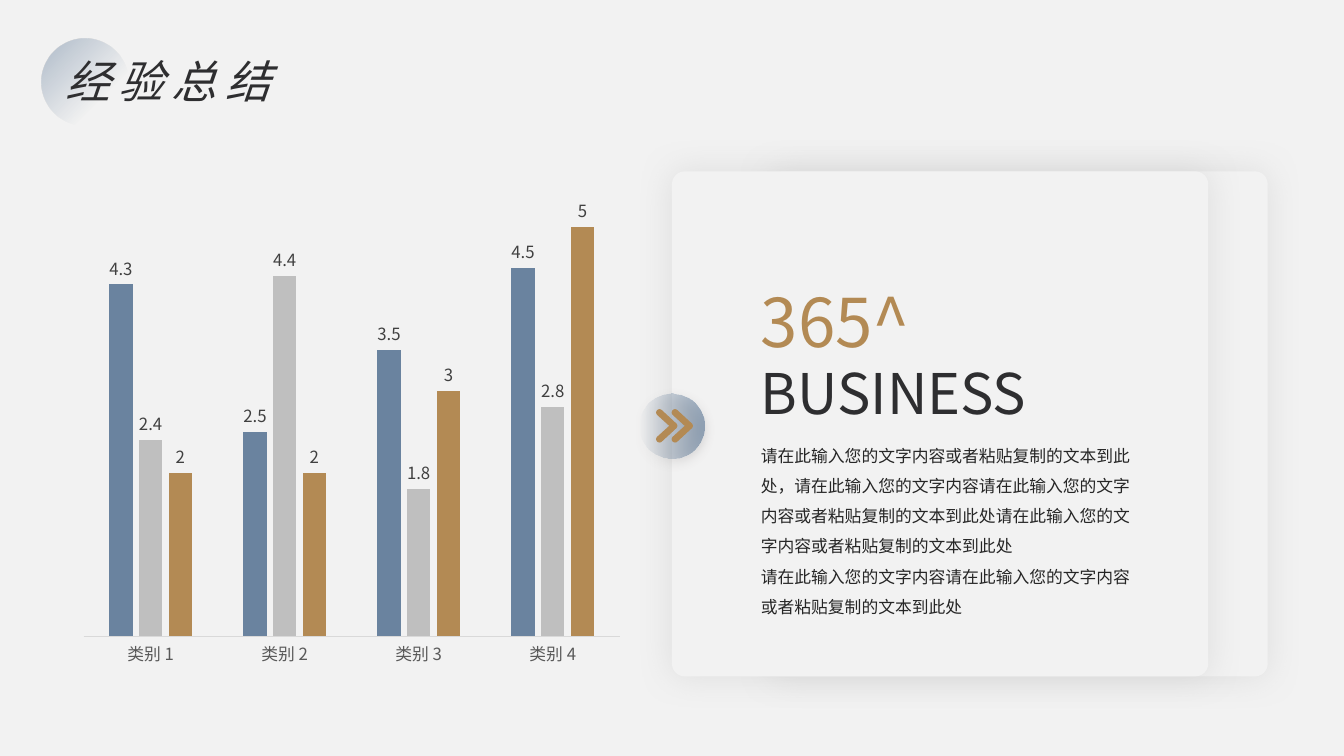
import math

from lxml import etree
from pptx import Presentation
from pptx.chart.data import CategoryChartData
from pptx.dml.color import RGBColor
from pptx.enum import chart as ch, shapes, text
from pptx.oxml import parse_xml
from pptx.oxml.ns import nsdecls, qn
from pptx.util import Pt

FONT = "Noto Sans CJK SC"
PAPER = RGBColor(0xF2, 0xF2, 0xF2)
INK = RGBColor(0x2E, 0x2E, 0x30)
BODY = RGBColor(0x26, 0x26, 0x26)
BLUE = RGBColor(0x6A, 0x83, 0x9F)
SILVER = RGBColor(0xBF, 0xBF, 0xBF)
GOLD = RGBColor(0xB3, 0x8A, 0x54)
SHADE = RGBColor(0x76, 0x71, 0x71)
LABEL = RGBColor(0x40, 0x40, 0x40)
AXIS_TEXT = RGBColor(0x59, 0x59, 0x59)
AXIS_LINE = RGBColor(0xD9, 0xD9, 0xD9)


def write(sp, content, size, color, italic=None, spacing=None, line=None):
    """Fill a text shape, one paragraph per line of content."""
    tf = sp.text_frame
    tf.word_wrap = True
    tf.auto_size = text.MSO_AUTO_SIZE.SHAPE_TO_FIT_TEXT
    tf.vertical_anchor = text.MSO_ANCHOR.TOP
    for i, words in enumerate(content.split("\n")):
        p = tf.add_paragraph() if i else tf.paragraphs[0]
        p.alignment = text.PP_ALIGN.LEFT
        p.space_before = Pt(0)
        p.line_spacing = line or 1.0
        r = p.add_run()
        r.text = words
        r.font.name, r.font.size, r.font.italic = FONT, Pt(size), italic
        r.font.color.rgb = color
        rPr = r.font._element
        etree.SubElement(rPr, qn("a:ea"), typeface=FONT)
        if spacing:
            rPr.set("spc", str(spacing * 100))


def paint(sp, fill=None, stops=None, angle=0, shadow=None):
    """Solid fill or (position, opacity) gradient stops, with a soft shadow."""
    sp.shadow.inherit = False
    sp.line.fill.background()
    if stops:
        gs = "".join(f'<a:gs pos="{pos * 1000}"><a:srgbClr val="{fill}">'
                     f'<a:alpha val="{alpha * 1000}"/></a:srgbClr></a:gs>'
                     for pos, alpha in stops)
        sp.element.spPr.find(qn("a:prstGeom")).addnext(parse_xml(
            f'<a:gradFill {nsdecls("a")} rotWithShape="1"><a:gsLst>{gs}</a:gsLst>'
            f'<a:lin ang="{angle * 60000}" scaled="0"/></a:gradFill>'))
    else:
        sp.fill.solid()
        sp.fill.fore_color.rgb = fill
    if shadow:
        color, alpha, blur, dist, direction = shadow
        sp.element.spPr.find(qn("a:effectLst")).append(parse_xml(
            f'<a:outerShdw {nsdecls("a")} blurRad="{Pt(blur)}" dist="{Pt(dist)}" '
            f'dir="{direction * 60000}" algn="ctr" rotWithShape="0">'
            f'<a:srgbClr val="{color}"><a:alpha val="{alpha * 1000}"/></a:srgbClr>'
            '</a:outerShdw>'))


prs = Presentation()
prs.slide_width, prs.slide_height = Pt(960), Pt(540)
s = prs.slides.add_slide(prs.slide_layouts[5])
s.background.fill.solid()
s.background.fill.fore_color.rgb = PAPER

# Title over a fading disc
disc = s.shapes.add_shape(shapes.MSO_SHAPE.OVAL, Pt(29.5), Pt(27.4), Pt(62.6), Pt(62.6))
paint(disc, BLUE, stops=[(0, 50), (69, 0)], angle=45)
title = s.shapes.title
title.left, title.top, title.width, title.height = Pt(39.6), Pt(34.6), Pt(225.4), Pt(45.4)
write(title, "经验总结", 32, INK, italic=True, spacing=6)
disc.element.addnext(title.element)

# Column chart
data = CategoryChartData()
data.categories = [f"类别 {n}" for n in range(1, 5)]
columns = [("Series 1", (4.3, 2.5, 3.5, 4.5), BLUE),
           ("Series 2", (2.4, 4.4, 1.8, 2.8), SILVER),
           ("Series 3", (2, 2, 3, 5), GOLD)]
for name, values, _ in columns:
    data.add_series(name, values)
chart = s.shapes.add_chart(ch.XL_CHART_TYPE.COLUMN_CLUSTERED, Pt(51.8), Pt(95.8),
                           Pt(398.9), Pt(387.4), data).chart
chart.has_legend = chart.has_title = False
chart.font.name, chart.font.size = FONT, Pt(10)
plot = chart.plots[0]
plot.gap_width, plot.overlap, plot.vary_by_categories = 219, -27, False
for series, (_, _, color) in zip(plot.series, columns):
    series.format.fill.solid()
    series.format.fill.fore_color.rgb = color
    labels = series.data_labels
    labels.show_value = True
    labels.position = ch.XL_LABEL_POSITION.OUTSIDE_END
    labels.font.name, labels.font.size = FONT, Pt(12)
    labels.font.color.rgb = LABEL
values_axis = chart.value_axis
values_axis.minimum_scale, values_axis.maximum_scale = 0, 6
values_axis.has_major_gridlines = values_axis.visible = False
axis = chart.category_axis
axis.major_tick_mark = ch.XL_TICK_MARK.NONE
axis.format.line.color.rgb, axis.format.line.width = AXIS_LINE, Pt(0.75)
axis.tick_labels.font.name, axis.tick_labels.font.size = FONT, Pt(12)
axis.tick_labels.font.color.rgb = AXIS_TEXT
for props in chart.element.iter(qn("a:defRPr")) if hasattr(chart, "element") else ():
    etree.SubElement(props, qn("a:ea"), typeface=FONT)

# Two stacked cards and their text
panel = s.shapes.add_group_shape()
for left, width in ((550.1, 355.4), (480, 383)):
    card = panel.shapes.add_shape(shapes.MSO_SHAPE.ROUNDED_RECTANGLE,
                                  Pt(left), Pt(122.4), Pt(width), Pt(360.7))
    card.adjustments[0] = 0.025
    paint(card, PAPER, shadow=(SILVER, 40, 25, 0, 0))
notes = (
    "请在此输入您的文字内容或者粘贴复制的文本到此处，请在此输入您的文字内容"
    "请在此输入您的文字内容或者粘贴复制的文本到此处"
    "请在此输入您的文字内容或者粘贴复制的文本到此处\n"
    "请在此输入您的文字内容请在此输入您的文字内容或者粘贴复制的文本到此处")
for content, top, width, height, size, color, line in (
        (notes, 307.4, 288, 136.8, 12, BODY, 1.5),
        ("BUSINESS", 252.7, 231.8, 55.4, 40, INK, None),
        ("365^", 196.6, 140.4, 64.8, 48, GOLD, None)):
    box = panel.shapes.add_textbox(Pt(536.4), Pt(top), Pt(width), Pt(height))
    write(box, content, size, color, line=line)

# Round badge with a double chevron
badge = s.shapes.add_group_shape()
disc = badge.shapes.add_shape(shapes.MSO_SHAPE.OVAL, Pt(456.6), Pt(280.8), Pt(46.8), Pt(46.8))
paint(disc, BLUE, stops=[(0, 0), (100, 70)], shadow=(SHADE, 40, 8, 3, 90))
R = 2.4  # half the stroke width
MID_Y, HALF_H, TIP = 304.2, 9.5, 10.3
for x in (471.1, 482.2):
    # Rounded ends and tip: centre, start angle, sweep
    arcs = [(x, MID_Y - HALF_H, -45, -180),
            (x + TIP - R * math.sqrt(2), MID_Y, 0, None),
            (x, MID_Y + HALF_H, -135, -180),
            (x + TIP, MID_Y, 45, -90)]
    points = []
    for cx, cy, start, sweep in arcs:
        if sweep is None:
            points.append((Pt(cx), Pt(cy)))
            continue
        for step in range(13):
            a = math.radians(start + sweep * step / 12)
            points.append((Pt(cx + R * math.cos(a)), Pt(cy + R * math.sin(a))))
    outline = badge.shapes.build_freeform(*points[0])
    outline.add_line_segments(points[1:], close=True)
    paint(outline.convert_to_shape(), GOLD)

prs.save("out.pptx")
